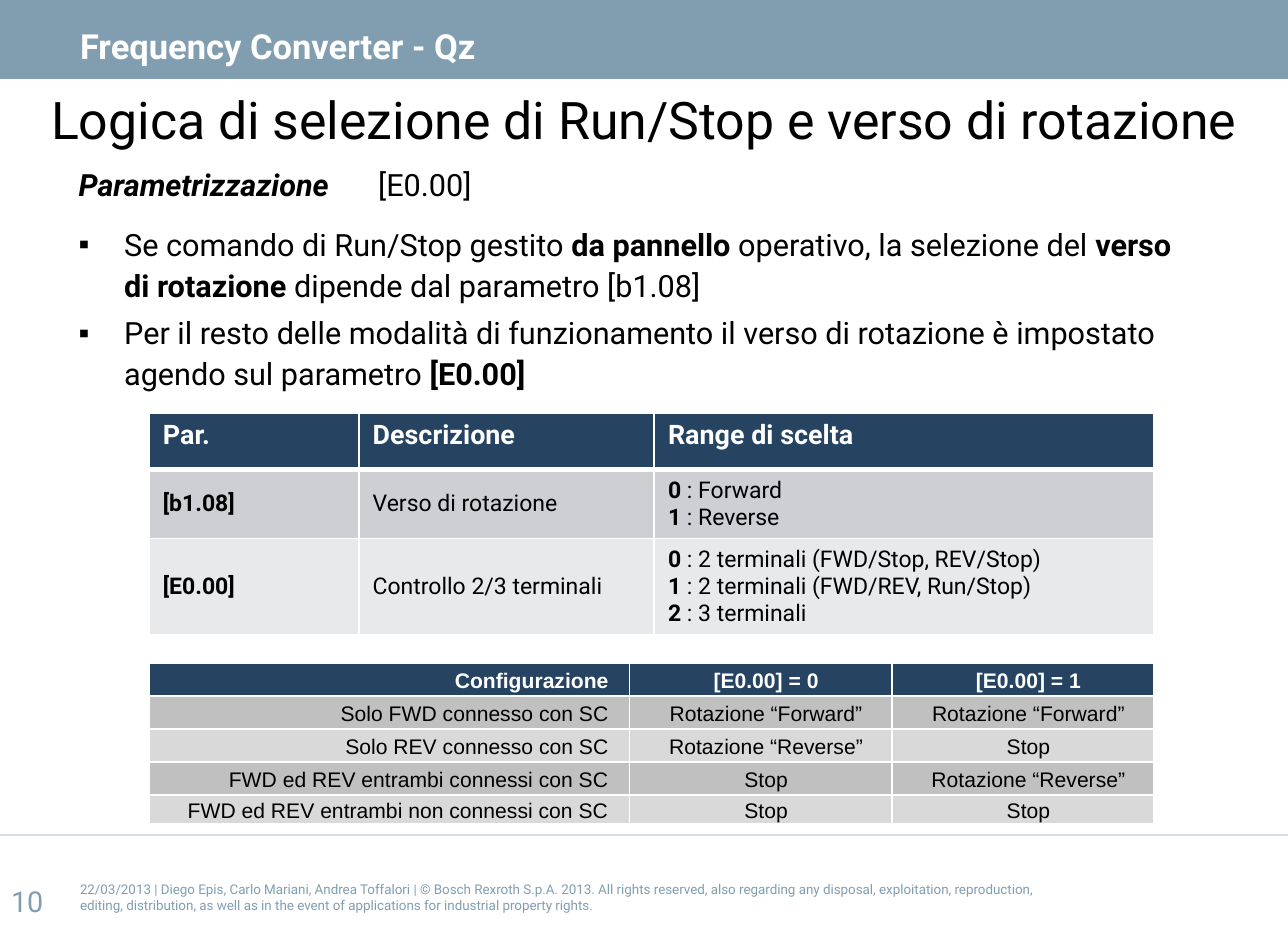
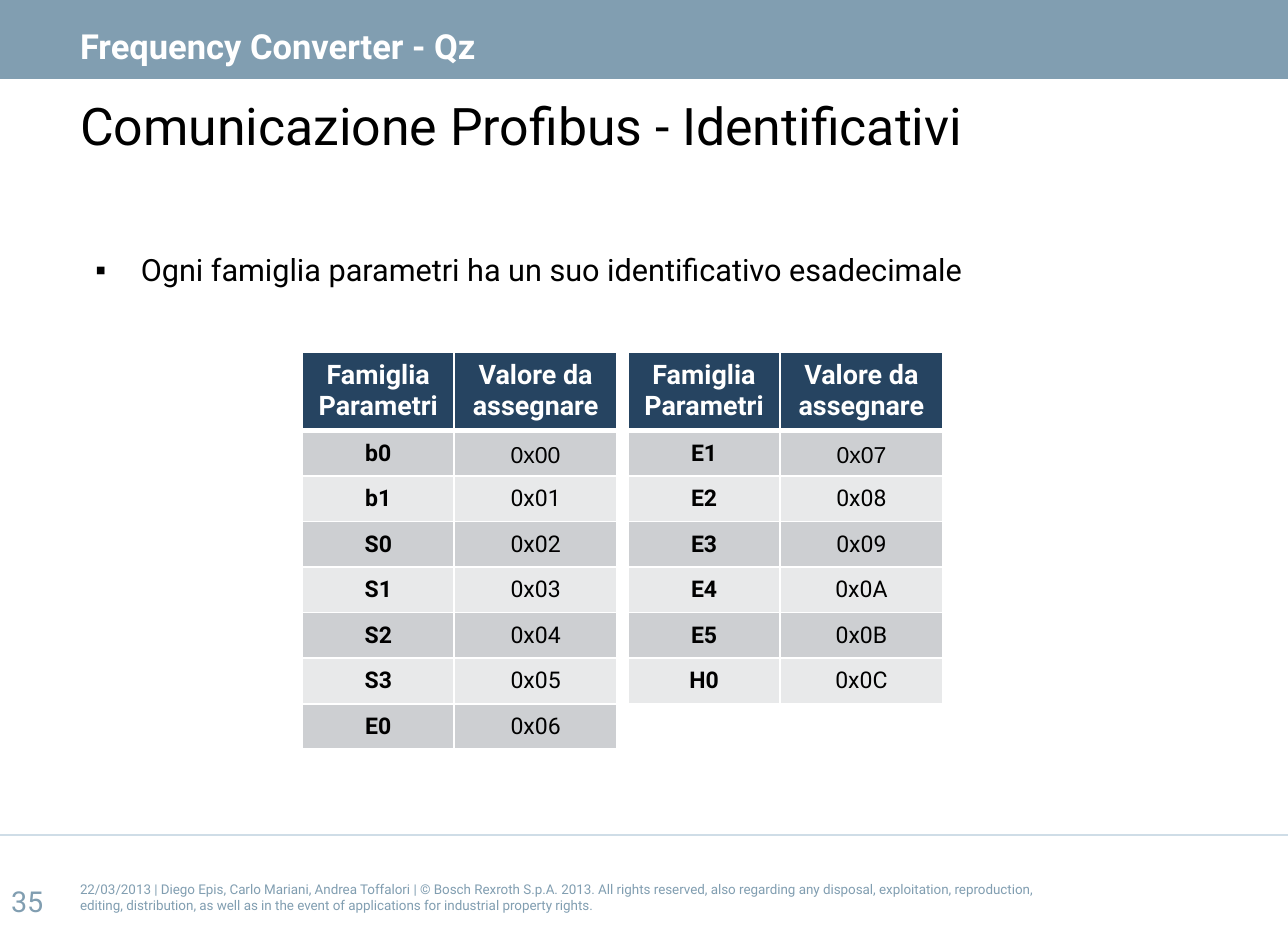
import pptx
import pptx.dml.color
import pptx.enum.shapes
import pptx.enum.text
import pptx.oxml
import pptx.oxml.ns
import pptx.util

Inches, Pt = pptx.util.Inches, pptx.util.Pt
ALIGN, ANCHOR = pptx.enum.text.PP_ALIGN, pptx.enum.text.MSO_ANCHOR
NAMESPACE = pptx.oxml.ns.nsdecls("a")

COLORS = {
    "band": "819EB1", "rule": "CFDDE7", "white": "FFFFFF", "black": "000000",
    "head": "264461", "dark_row": "CDCFD2", "light_row": "E8E9EA",
    "dark_gray": "C0C0C0", "light_gray": "D9D9D9",
}

# Content: text between asterisks is bold, a line break starts a paragraph
HEADER = "*Frequency Converter - Qz*"
FOOTER = (
    "22/03/2013 | Diego Epis, Carlo Mariani, Andrea Toffalori | "
    "© Bosch Rexroth S.p.A. 2013. All rights reserved, also regarding any disposal, "
    "exploitation, reproduction, editing, distribution, as well as in the event of "
    "applications for industrial property rights."
)
LOGIC_BULLETS = [
    "Se comando di Run/Stop gestito *da pannello* operativo, la selezione del "
    "*verso di rotazione* dipende dal parametro [b1.08]",
    "Per il resto delle modalità di funzionamento il verso di rotazione è impostato "
    "agendo sul parametro *[E0.00]*",
]
PARAMETERS = [
    ("*Par.*", "*Descrizione*", "*Range di scelta*"),
    ("*[b1.08]*", "Verso di rotazione", "*0* : Forward\n*1* : Reverse"),
    ("*[E0.00]*", "Controllo 2/3 terminali",
     "*0* : 2 terminali (FWD/Stop, REV/Stop)\n"
     "*1* : 2 terminali (FWD/REV, Run/Stop)\n*2* : 3 terminali"),
]
CONFIGURATIONS = [
    ("*Configurazione*", "*[E0.00] = 0*", "*[E0.00] = 1*"),
    ("Solo FWD connesso con SC", "Rotazione “Forward”", "Rotazione “Forward”"),
    ("Solo REV connesso con SC", "Rotazione “Reverse”", "Stop"),
    ("FWD ed REV entrambi connessi con SC", "Stop", "Rotazione “Reverse”"),
    ("FWD ed REV entrambi non connessi con SC", "Stop", "Stop"),
]
FAMILY_HEAD = ("*Famiglia Parametri*", "*Valore da assegnare*")
FAMILIES = ["b0", "b1", "S0", "S1", "S2", "S3", "E0", "E1", "E2", "E3", "E4", "E5", "H0"]
FAMILY_BULLET = "Ogni famiglia parametri ha un suo identificativo esadecimale"


def rgb(name):
    return pptx.dml.color.RGBColor.from_string(COLORS[name])


def write(paragraph, text, size, color="black", font="Roboto", italic=False):
    """Add runs, with every second piece between asterisks in bold."""
    for index, piece in enumerate(text.split("*")):
        if piece:
            run = paragraph.add_run()
            run.text = piece
            run.font.size, run.font.name = Pt(size), font
            run.font.bold = index % 2 == 1
            run.font.italic = italic
            run.font.color.rgb = rgb(color)


def add_text_frame(slide, left, top, width, height, inset=0, anchor=ANCHOR.TOP, wrap=True):
    box = slide.shapes.add_textbox(Inches(left), Inches(top), Inches(width), Inches(height))
    frame = box.text_frame
    frame.word_wrap = wrap
    frame.vertical_anchor = anchor
    frame.margin_left = frame.margin_right = frame.margin_bottom = 0
    frame.margin_top = Inches(inset)
    return frame


def add_rule(slide, top, color):
    line = slide.shapes.add_connector(
        pptx.enum.shapes.MSO_CONNECTOR.STRAIGHT, 0, Inches(top), Inches(9.33), Inches(top))
    line.line.color.rgb = rgb(color)
    line.line.width = Pt(1)
    line._element.spPr.append(pptx.oxml.parse_xml(f"<a:effectLst {NAMESPACE}/>"))


def add_bullet(paragraph, text):
    properties = paragraph._p.get_or_add_pPr()
    properties.set("marL", str(Inches(0.33)))
    properties.set("indent", str(-Inches(0.33)))
    properties.append(pptx.oxml.parse_xml(f'<a:buFont {NAMESPACE} typeface="Arial"/>'))
    properties.append(pptx.oxml.parse_xml(f'<a:buChar {NAMESPACE} char="▪"/>'))
    paragraph.line_spacing = 1.11
    write(paragraph, text, 16)


def add_page(presentation, number, title, title_at):
    """Add a slide with band, rules, header, title, footer and page number."""
    slide = presentation.slides.add_slide(presentation.slide_layouts[6])
    band = slide.shapes.add_shape(
        pptx.enum.shapes.MSO_SHAPE.RECTANGLE, 0, 0, Inches(9.33), Inches(0.58))
    band.shadow.inherit = False
    band.fill.solid()
    band.fill.fore_color.rgb = rgb("band")
    band.line.fill.background()
    add_rule(slide, 0.58, "white")
    add_rule(slide, 6.05, "rule")

    footer = add_text_frame(slide, 0.58, 6.34, 7, 0.32, anchor=ANCHOR.MIDDLE)
    write(footer.paragraphs[0], FOOTER, 7, "band")
    page = add_text_frame(slide, 0.08, 6.4, 0.42, 0.21, wrap=False)
    write(page.paragraphs[0], str(number), 15, "band")
    header = add_text_frame(slide, 0.58, 0, 8, 0.57, 0.06, ANCHOR.MIDDLE)
    header.paragraphs[0].line_spacing = 1.11
    write(header.paragraphs[0], HEADER, 18, "white")
    heading = add_text_frame(slide, *title_at, 0.51, 0.01)
    heading.paragraphs[0].line_spacing = 1.11
    write(heading.paragraphs[0], title, 27)
    return slide


def style_cell(cell, fill, thick_side=None):
    """Give a cell white borders, one of them thick if named, and a fill."""
    properties = cell._tc.get_or_add_tcPr()
    for side in "LRTB":
        width = Pt(3 if side == thick_side else 1)
        properties.append(pptx.oxml.parse_xml(
            f'<a:ln{side} {NAMESPACE} w="{width}"><a:solidFill>'
            f'<a:srgbClr val="{COLORS["white"]}"/></a:solidFill></a:ln{side}>'))
    cell.fill.solid()
    cell.fill.fore_color.rgb = rgb(fill)


def write_cell(cell, text, size, color, font, align):
    for index, line in enumerate(text.split("\n")):
        frame = cell.text_frame
        paragraph = frame.add_paragraph() if index else frame.paragraphs[0]
        paragraph.alignment = align
        if font == "Arial":
            paragraph.line_spacing = 1.15
        write(paragraph, line, size, color, font)


def add_grid(slide, left, top, rows, widths, heights, aligns, compact=False, arial_cells=()):
    frame = slide.shapes.add_table(
        len(rows), len(widths), Inches(left), Inches(top),
        Inches(sum(widths)), Inches(sum(heights)))
    table = frame.table
    for column, width in zip(table.columns, widths):
        column.width = Inches(width)
    for row, height in zip(table.rows, heights):
        row.height = Inches(height)
    bands = ("light_gray", "dark_gray") if compact else ("light_row", "dark_row")
    for r, row in enumerate(rows):
        for c, text in enumerate(row):
            cell = table.cell(r, c)
            thick = None if compact else {0: "B", 1: "T"}.get(r)
            style_cell(cell, bands[r % 2] if r else "head", thick)
            arial = compact or (r, c) in arial_cells
            if compact or r:
                cell.vertical_anchor = ANCHOR.MIDDLE
            if arial:
                cell.margin_top = cell.margin_bottom = 0
                cell.margin_left = cell.margin_right = Inches(0.07)
            if compact:
                if c:
                    cell.margin_left = Inches(0.15)
                else:
                    cell.margin_right = Inches(0.15)
            size = 11 if compact else 12 if r else 14
            write_cell(cell, text, size, "black" if r else "white",
                       "Arial" if arial else "Roboto", aligns[c])


def build_logic_slide(presentation):
    slide = add_page(presentation, 10,
                     "Logica di selezione di Run/Stop e verso di rotazione", (0.37, 0.58, 8.66))
    body = add_text_frame(slide, 0.57, 1.1, 8, 1.8, 0.07)
    lead = body.paragraphs[0]
    lead._p.get_or_add_pPr().append(pptx.oxml.parse_xml(
        f'<a:tabLst {NAMESPACE}><a:tab pos="{Inches(2.17)}" algn="l"/></a:tabLst>'))
    lead.line_spacing = 1.11
    write(lead, "*Parametrizzazione*", 16, italic=True)
    write(lead, "\t[E0.00]", 16)
    for text, space in zip(LOGIC_BULLETS, (10, 3.7)):
        paragraph = body.add_paragraph()
        add_bullet(paragraph, text)
        paragraph.space_before = Pt(space)

    add_grid(slide, 1.08, 2.99, PARAMETERS, (1.52, 2.14, 3.62), (0.41, 0.48, 0.69),
             [ALIGN.LEFT] * 3)
    add_grid(slide, 1.08, 4.8, CONFIGURATIONS, (3.48, 1.9, 1.9), [0.24] * 4 + [0.18],
             (ALIGN.RIGHT, ALIGN.CENTER, ALIGN.CENTER), compact=True)


def build_family_slide(presentation):
    slide = add_page(presentation, 35,
                     "Comunicazione Profibus - Identificativi", (0.58, 0.62, 8))
    body = add_text_frame(slide, 0.69, 1.72, 8.11, 0.87, 0.07)
    add_bullet(body.paragraphs[0], FAMILY_BULLET)

    # Identifiers count up from zero, seven in the first table
    entries = [(f"*{name}*", f"0x{value:02X}") for value, name in enumerate(FAMILIES)]
    for left, part in ((2.19, entries[:7]), (4.55, entries[7:])):
        add_grid(slide, left, 2.55, [FAMILY_HEAD] + part, (1.1, 1.18),
                 [0.56] + [0.33] * len(part), [ALIGN.CENTER] * 2, arial_cells={(1, 1)})


def main():
    presentation = pptx.Presentation()
    presentation.slide_width, presentation.slide_height = Inches(9.33), Inches(6.75)
    build_logic_slide(presentation)
    build_family_slide(presentation)
    presentation.save("out.pptx")


if __name__ == "__main__":
    main()
